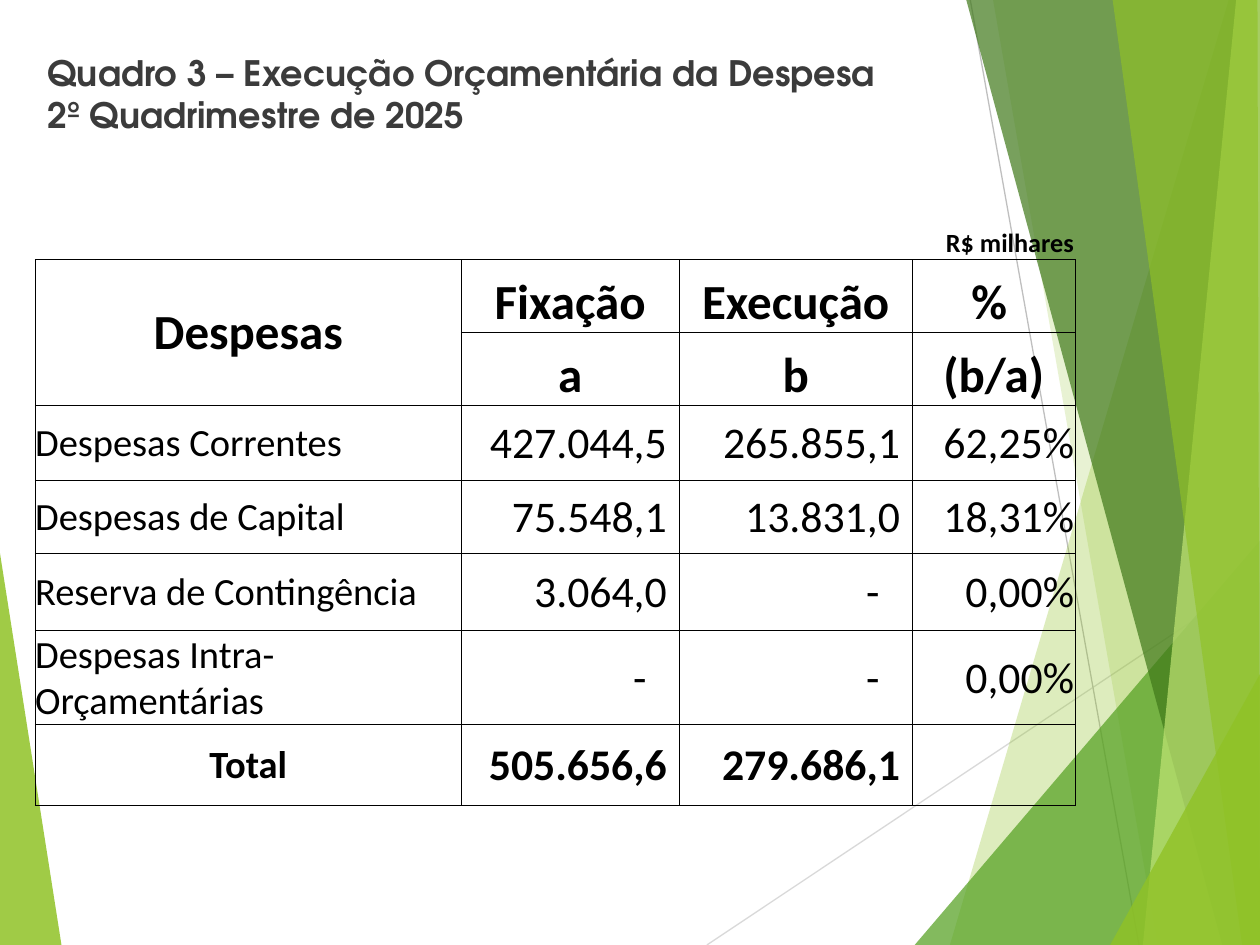
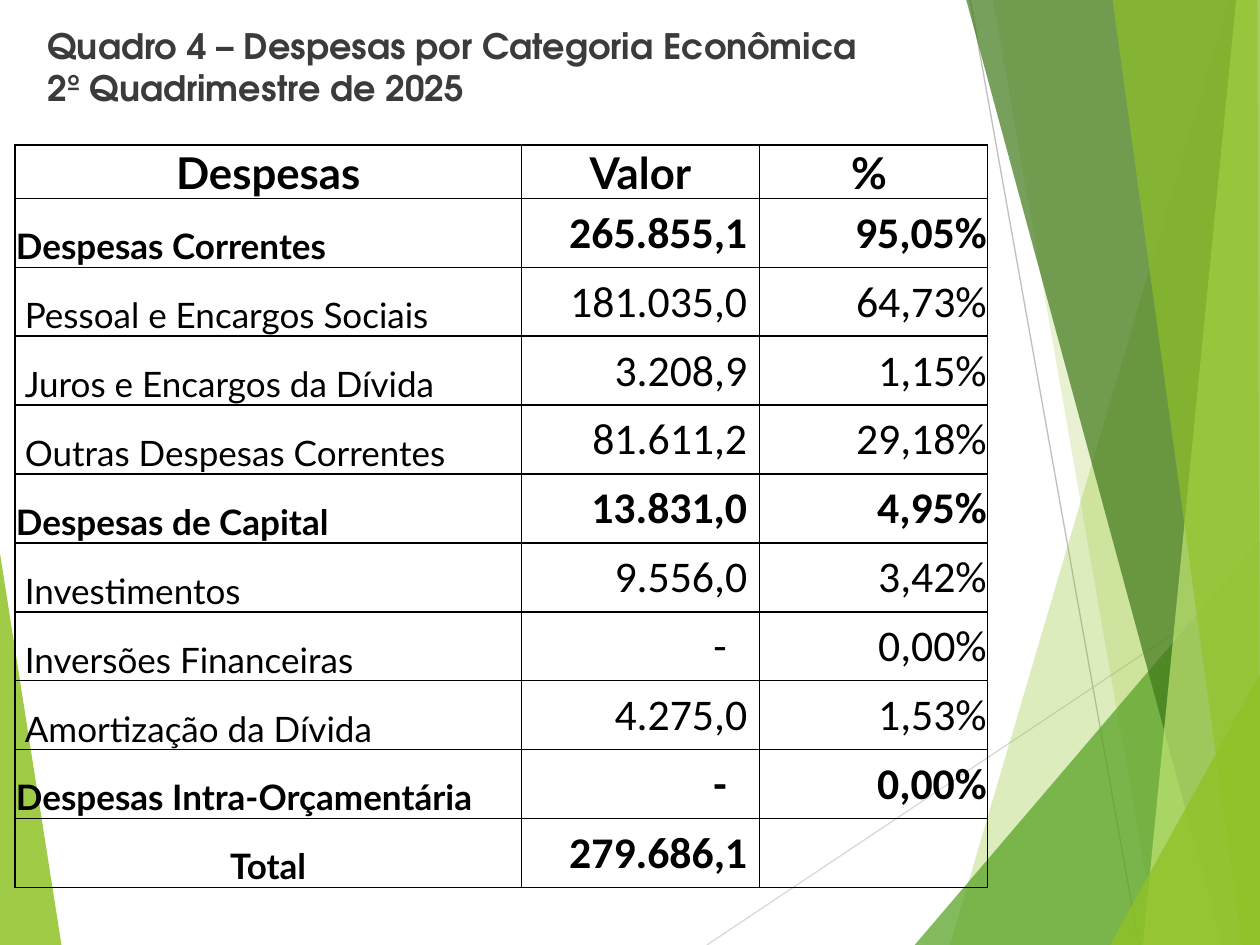
from dataclasses import dataclass

from lxml.etree import SubElement
from pptx import Presentation
from pptx.dml.color import RGBColor as Rgb
from pptx.enum.shapes import MSO_CONNECTOR as Connector
from pptx.enum.text import MSO_ANCHOR as Anchor, PP_ALIGN as Align
from pptx.oxml.ns import qn
from pptx.util import Cm, Pt


@dataclass(frozen=True)
class Theme:
    ink: str = "000000"
    title_ink: str = "3B3B3B"
    lime: str = "90C226"
    green: str = "54A021"
    forest: str = "3F7819"
    pale: str = "C0E474"
    line_light: str = "D9D9D9"
    line_mid: str = "BFBFBF"
    title_font: str = "TeX Gyre Adventor"
    body_font: str = "Calibri"
    label_font: str = "Lato"
    title_size: int = 20
    unit_size: int = 15
    heading_size: int = 28
    value_size: int = 25
    label_size: int = 22
    item_size: int = 20


theme = Theme()
WIDTH, HEIGHT = 25.4, 19.05
CORNERS = [(WIDTH, HEIGHT), (WIDTH, 0)]
HAIR, GAP, DASH_GAP, PERCENT_GAP = 0.02, 0.25, 0.66, 0.2

left_band = (theme.lime, 85, [(0, 11.15), (1.24, HEIGHT), (0, HEIGHT)])
right_bands = [
    (theme.lime, 30, [(24.77, 0), (19.15, HEIGHT), *CORNERS]),
    (theme.lime, 20, [(20.02, 0), (23.34, HEIGHT), *CORNERS]),
    (theme.green, 72, [(18.44, HEIGHT), (WIDTH, 10.9), CORNERS[0]]),
    (theme.forest, 70, [(19.48, 0), (24.64, HEIGHT), *CORNERS]),
    (theme.pale, 70, [(24.92, 0), (23.04, HEIGHT), *CORNERS]),
    (theme.lime, 65, [(22.43, 0), (25.04, HEIGHT), CORNERS[0], (25.35, 0)]),
    (theme.lime, 80, [(22.38, HEIGHT), (WIDTH, 13.59), CORNERS[0]]),
]
thin_lines = [
    (theme.line_light, (14.25, HEIGHT, WIDTH, 11.61)),
    (theme.line_mid, (19.56, 0, 22.96, HEIGHT)),
]
titles = [
    ("Quadro 3 – Execução Orçamentária da Despesa", 0.91),
    ("Quadro 4 – Despesas por Categoria Econômica", 0.36),
]


def write_cell(cell, text, size, bold=False, align=Align.RIGHT, anchor=Anchor.MIDDLE,
               font=theme.body_font, left=HAIR, right=HAIR):
    layout = {"margin_left": Cm(left), "margin_right": Cm(right), "margin_top": Cm(HAIR),
              "margin_bottom": 0, "vertical_anchor": anchor}
    for name, value in layout.items():
        setattr(cell, name, value)
    para = cell.text_frame.paragraphs[0]
    para.alignment = align
    if text:
        span = para.add_run()
        span.text = text
        for name, value in {"name": font, "size": Pt(size), "bold": bold}.items():
            setattr(span.font, name, value)
        span.font.color.rgb = Rgb.from_string(theme.ink)


def make_table(page, left, top, widths, heights, border, open_rows=0):
    table = page.shapes.add_table(len(heights), len(widths), Cm(left), Cm(top),
                                  Cm(sum(widths)), Cm(sum(heights))).table
    table.first_row = table.horz_banding = False
    for column, width in zip(table.columns, widths):
        column.width = Cm(width)
    for row, height in zip(table.rows, heights):
        row.height = Cm(height)
    for number, row in enumerate(table.rows):
        for cell in row.cells:
            cell.margin_left = cell.margin_right = 0
            properties = cell._tc.get_or_add_tcPr()
            for side in "LRTB":
                edge = SubElement(properties, qn(f"a:ln{side}"), w=str(Pt(border)))
                if number < open_rows and side != "B":
                    SubElement(edge, qn("a:noFill"))
                else:
                    fill = SubElement(edge, qn("a:solidFill"))
                    SubElement(fill, qn("a:srgbClr"), val=theme.ink)
            cell.fill.background()
    return table


deck = Presentation()
deck.slide_width, deck.slide_height = Cm(WIDTH), Cm(HEIGHT)
pages = []

for title, top in titles:
    page = deck.slides.add_slide(deck.slide_layouts[6])
    pages.append(page)
    for index, (colour, opacity, points) in enumerate([left_band, *right_bands]):
        corners = [(Cm(x), Cm(y)) for x, y in points]
        builder = page.shapes.build_freeform(*corners[0])
        builder.add_line_segments(corners[1:], close=True)
        band = builder.convert_to_shape()
        band.shadow.inherit = False
        band.fill.solid()
        band.fill.fore_color.rgb = Rgb.from_string(colour)
        band.line.fill.background()
        tint = band.element.spPr.find(".//" + qn("a:srgbClr"))
        SubElement(tint, qn("a:alpha"), val=str(opacity * 1000))
        if index == 0:
            for line_colour, ends in thin_lines:
                line = page.shapes.add_connector(Connector.STRAIGHT, *map(Cm, ends))
                line.line.color.rgb = Rgb.from_string(line_colour)
                line.line.width = Pt(0.75)
                SubElement(line.element.spPr, qn("a:effectLst"))

    box = page.shapes.add_textbox(Cm(0.71), Cm(top), Cm(21.6), Cm(1.9))
    frame = box.text_frame
    frame.word_wrap = True
    frame.vertical_anchor = Anchor.TOP
    para = frame.paragraphs[0]
    for number, text in enumerate([title, "2º Quadrimestre de 2025"]):
        if number:
            para.add_line_break()
        span = para.add_run()
        span.text = text
        title_format = {"name": theme.title_font, "size": Pt(theme.title_size), "bold": True}
        for name, value in title_format.items():
            setattr(span.font, name, value)
        span.font.color.rgb = Rgb.from_string(theme.title_ink)

execution = [
    ("Despesas Correntes", "427.044,5", "265.855,1", "62,25%"),
    ("Despesas de Capital", "75.548,1", "13.831,0", "18,31%"),
    ("Reserva de Contingência", "3.064,0", "-", "0,00%"),
    ("Despesas Intra-Orçamentárias", "-", "-", "0,00%"),
    ("Total", "505.656,6", "279.686,1", ""),
]
table = make_table(pages[0], 0.71, 3.12, [8.59, 0.3, 4.09, 2.29, 2.41, 3.28],
                   [2.11, 1.47, 1.47, 1.52, 1.47, 1.55, 1.9, 1.63], 0.5, open_rows=1)
for row in range(1, len(table.rows)):
    for column in (1, 3):
        table.cell(row, column).merge(table.cell(row, column + 1))
table.cell(1, 0).merge(table.cell(2, 0))

write_cell(table.cell(0, 5), "R$ milhares", theme.unit_size, True, anchor=Anchor.BOTTOM)
write_cell(table.cell(1, 0), "Despesas", theme.heading_size, True, Align.CENTER)
for row, headings in enumerate([("Fixação", "Execução", "%"), ("a", "b", "(b/a)")], 1):
    for column, text in zip((1, 3, 5), headings):
        write_cell(table.cell(row, column), text, theme.heading_size, True, Align.CENTER,
                   Anchor.BOTTOM, right=PERCENT_GAP if text == "%" else HAIR)
for row, (label, *amounts, percent) in enumerate(execution, 3):
    total = label == "Total"
    write_cell(table.cell(row, 0), label, theme.label_size, total,
               Align.CENTER if total else Align.LEFT, left=0, right=0)
    for column, amount in zip((1, 3), amounts):
        write_cell(table.cell(row, column), amount, theme.value_size, total,
                   right=DASH_GAP if amount == "-" else GAP)
    write_cell(table.cell(row, 5), percent, theme.value_size)

categories = [
    ("Despesas Correntes", "265.855,1", "95,05%", True),
    ("Pessoal e Encargos Sociais", "181.035,0", "64,73%", False),
    ("Juros e Encargos da Dívida", "3.208,9", "1,15%", False),
    ("Outras Despesas Correntes", "81.611,2", "29,18%", False),
    ("Despesas de Capital", "13.831,0", "4,95%", True),
    ("Investimentos", "9.556,0", "3,42%", False),
    ("Inversões Financeiras", "-", "0,00%", False),
    ("Amortização da Dívida", "4.275,0", "1,53%", False),
    ("Despesas Intra-Orçamentária", "-", "0,00%", True),
    ("Total", "279.686,1", "", True),
]
table = make_table(pages[1], 0.3, 2.92, [10.21, 4.8, 4.6],
                   [1.07] + [1.39] * len(categories), 1)
for column, text in enumerate(["Despesas", "Valor", "%"]):
    write_cell(table.cell(0, column), text, theme.value_size, True, Align.CENTER,
               font=theme.label_font, right=PERCENT_GAP if text == "%" else HAIR)
for row, (label, amount, percent, bold) in enumerate(categories, 1):
    write_cell(table.cell(row, 0), label, theme.item_size, bold,
               Align.CENTER if label == "Total" else Align.LEFT, Anchor.BOTTOM,
               theme.label_font, left=HAIR if bold else 0.2)
    write_cell(table.cell(row, 1), amount, theme.value_size, bold,
               right=DASH_GAP if amount == "-" else GAP)
    write_cell(table.cell(row, 2), percent, theme.value_size, bold)

deck.save("out.pptx")
